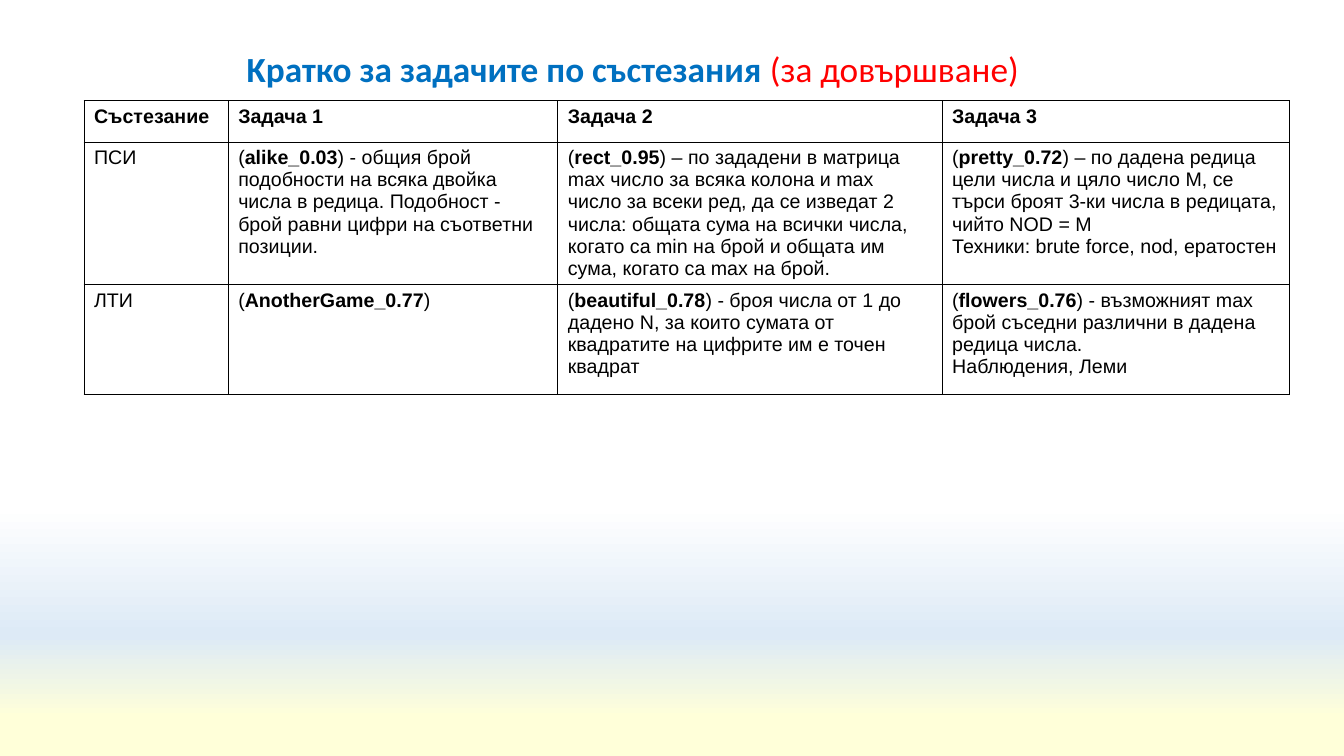
from dataclasses import dataclass

from lxml import etree
from pptx import Presentation
from pptx.dml.color import RGBColor
from pptx.enum.text import MSO_ANCHOR, MSO_AUTO_SIZE, PP_ALIGN
from pptx.oxml import parse_xml
from pptx.oxml.ns import nsdecls, qn
from pptx.slide import Slide
from pptx.table import _Cell as Cell
from pptx.text.text import _Paragraph as Paragraph
from pptx.util import Pt

BLACK = RGBColor(0x00, 0x00, 0x00)
BLUE = RGBColor(0x00, 0x70, 0xC0)
RED = RGBColor(0xFF, 0x00, 0x00)
WHITE = RGBColor(0xFF, 0xFF, 0xFF)
PALE_BLUE = RGBColor(0xDD, 0xEA, 0xF6)
PALE_YELLOW = RGBColor(0xFF, 0xFF, 0xD9)

BACKDROP = [(0, WHITE), (67, WHITE), (84, PALE_BLUE),
            (95, PALE_YELLOW), (100, PALE_YELLOW)]
COLUMN_WIDTHS = [103, 235.5, 274.5, 248]
ROW_HEIGHTS = [29.5, 58.5, 78.5]
HEADINGS = ["Състезание", "Задача 1", "Задача 2", "Задача 3"]


@dataclass(frozen=True)
class Task:
    code: str
    summary: str = ""
    techniques: str = ""


@dataclass(frozen=True)
class Contest:
    name: str
    tasks: tuple[Task, ...]


CONTESTS = [
    Contest("ПСИ", (
        Task("alike_0.03",
             " - общия брой подобности на всяка двойка числа в редица. "
             "Подобност - брой равни цифри на съответни позиции."),
        Task("rect_0.95",
             " – по зададени в матрица max число за всяка колона и max число "
             "за всеки ред, да се изведат 2 числа: общата сума на всички числа, "
             "когато са min на брой и общата им сума, когато са max на брой."),
        Task("pretty_0.72",
             " – по дадена редица цели числа и цяло число M, се търси броят "
             "3-ки числа в редицата, чийто NOD = М",
             "Техники: brute force, nod, ератостен"),
    )),
    Contest("ЛТИ", (
        Task("AnotherGame_0.77"),
        Task("beautiful_0.78",
             " - броя числа от 1 до дадено N, за които сумата от квадратите "
             "на цифрите им е точен квадрат"),
        Task("flowers_0.76",
             " - възможният max брой съседни различни в дадена редица числа.",
             "Наблюдения, Леми"),
    )),
]


def add_text(paragraph: Paragraph, text: str, *, size: float = 14,
             font: str = "Arial", color: RGBColor = BLACK,
             bold: bool = False) -> None:
    run = paragraph.add_run()
    run.text = text
    run.font.size = Pt(size)
    run.font.name = font
    run.font.color.rgb = color
    run.font.bold = bold


def paint_backdrop(slide: Slide) -> None:
    fill = slide.background.fill
    fill.gradient()
    fill.gradient_angle = 270
    stops = next(slide.element.iter(qn("a:gsLst")))
    for stop in list(stops):
        stops.remove(stop)
    for percent, color in BACKDROP:
        stop = etree.SubElement(stops, qn("a:gs"), pos=str(percent * 1000))
        etree.SubElement(stop, qn("a:srgbClr"), val=str(color))


def write_title(slide: Slide) -> None:
    title = slide.shapes.title
    title.left, title.top = Pt(169), Pt(29)
    title.width, title.height = Pt(621), Pt(43)
    frame = title.text_frame
    frame.auto_size = MSO_AUTO_SIZE.NONE
    frame.vertical_anchor = MSO_ANCHOR.MIDDLE
    heading = frame.paragraphs[0]
    heading.alignment = PP_ALIGN.LEFT
    heading.line_spacing = 0.9
    add_text(heading, "Kратко за задачите по състезания ",
             size=25.2, font="Calibri", color=BLUE, bold=True)
    add_text(heading, "(за довършване)", size=25.2, font="Calibri", color=RED)


def outline_cell(cell: Cell) -> None:
    cell.fill.background()
    properties = cell._tc.get_or_add_tcPr()
    for position, side in enumerate(("lnL", "lnR", "lnT", "lnB")):
        properties.insert(position, parse_xml(
            f'<a:{side} {nsdecls("a")} w="{Pt(0.75)}"><a:solidFill>'
            f'<a:srgbClr val="{BLACK}"/></a:solidFill></a:{side}>'))


def write_task(cell: Cell, task: Task) -> None:
    description = cell.text_frame.paragraphs[0]
    add_text(description, "(")
    add_text(description, task.code, bold=True)
    add_text(description, ")" + task.summary)
    if task.techniques:
        add_text(cell.text_frame.add_paragraph(), task.techniques)


def add_contest_table(slide: Slide) -> None:
    frame = slide.shapes.add_table(
        len(CONTESTS) + 1, len(HEADINGS),
        Pt(60), Pt(72), Pt(sum(COLUMN_WIDTHS)), Pt(216))
    table = frame.table
    table.first_row = table.horz_banding = False
    for column, width in zip(table.columns, COLUMN_WIDTHS):
        column.width = Pt(width)
    for row, height in zip(table.rows, ROW_HEIGHTS):
        row.height = Pt(height)
    for cell in table.iter_cells():
        outline_cell(cell)

    # Heading row
    for column, heading in enumerate(HEADINGS):
        add_text(table.cell(0, column).text_frame.paragraphs[0], heading, bold=True)

    # One row per contest
    for row, contest in enumerate(CONTESTS, start=1):
        add_text(table.cell(row, 0).text_frame.paragraphs[0], contest.name)
        for column, task in enumerate(contest.tasks, start=1):
            write_task(table.cell(row, column), task)


def main() -> None:
    presentation = Presentation()
    presentation.slide_width, presentation.slide_height = Pt(960), Pt(540)
    slide = presentation.slides.add_slide(presentation.slide_layouts[5])
    paint_backdrop(slide)
    write_title(slide)
    add_contest_table(slide)
    presentation.save("out.pptx")


if __name__ == "__main__":
    main()
